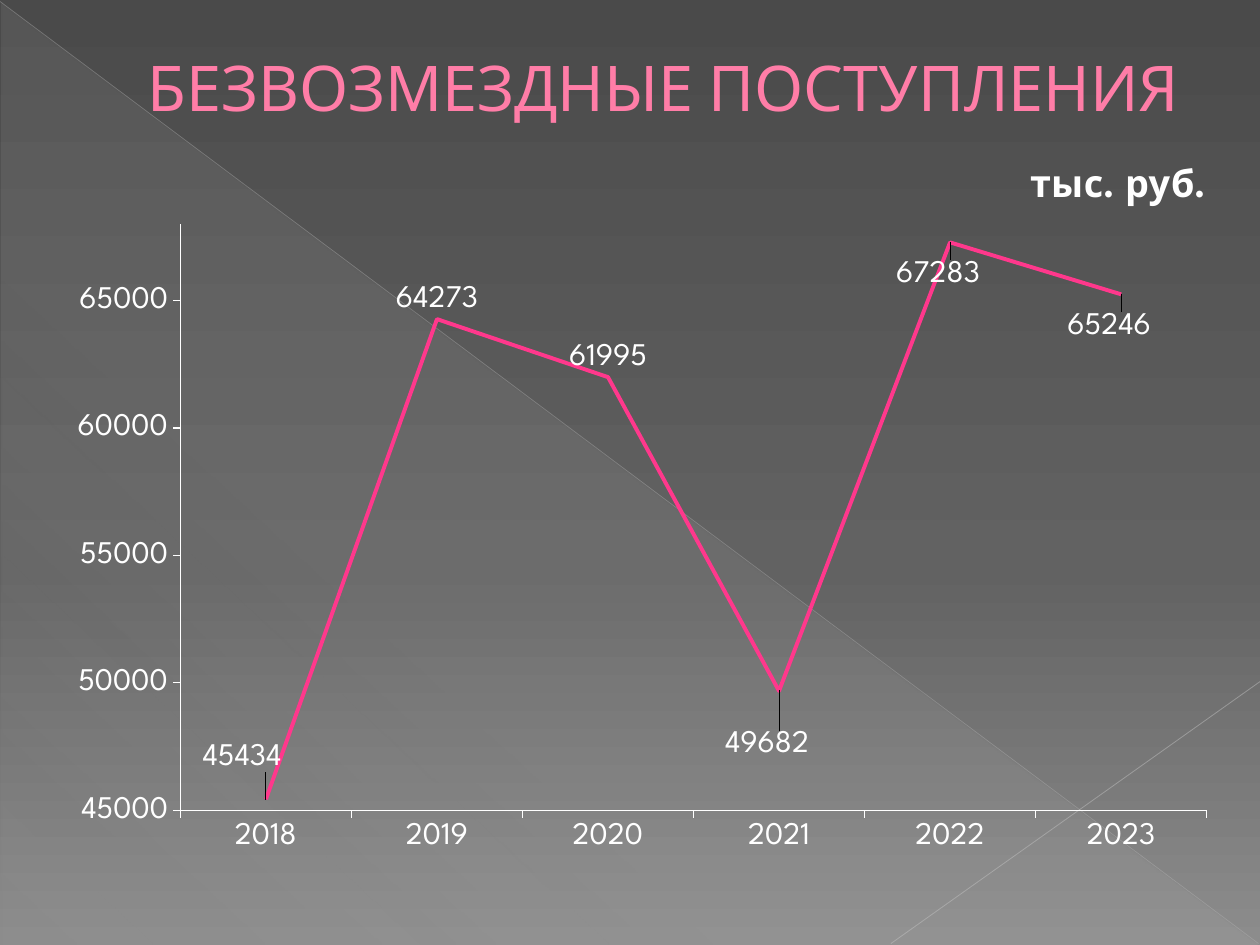
from lxml import etree
from pptx import Presentation
from pptx import util as u
from pptx.chart.data import CategoryChartData
from pptx.dml.color import RGBColor
from pptx.enum import chart as ch, shapes, text
from pptx.oxml.ns import qn

FONT = "League Spartan"


def rgb(value):
    return RGBColor.from_string(value)


def set_layout(parent, index, **settings):
    """Give a chart part a manual layout, replacing any it has."""
    for old in parent.findall(qn("c:layout")):
        parent.remove(old)
    layout = etree.Element(qn("c:layout"))
    manual = etree.SubElement(layout, qn("c:manualLayout"))
    for name, value in settings.items():
        etree.SubElement(manual, qn("c:" + name)).set("val", str(value))
    parent.insert(index, layout)


prs = Presentation()
prs.slide_width, prs.slide_height = u.Cm(25.4), u.Cm(19.05)
slide = prs.slides.add_slide(prs.slide_layouts[5])

# Background and corner triangle: (position, colour, opacity) in percent
slide.background.fill.gradient()
triangle = slide.shapes.add_shape(
    shapes.MSO_SHAPE.RIGHT_TRIANGLE, u.Cm(0.03), u.Cm(0.05), u.Cm(25.35), u.Cm(19))
triangle.shadow.inherit = False
triangle.line.fill.background()
triangle.fill.gradient()

gradients = [
    (slide._element.cSld.find(qn("p:bg")), 90,
     [(0, "4A4A4A", 100), (60, "626262", 100), (100, "8C8C8C", 100)]),
    (triangle._element.spPr, 133,
     [(0, "D2D2D2", 10), (70, "D2D2D2", 8), (100, "D2D2D2", 1)]),
]
for owner, angle, stops in gradients:
    gradient = next(owner.iter(qn("a:gradFill")))
    for child in list(gradient):
        gradient.remove(child)
    stop_list = etree.SubElement(gradient, qn("a:gsLst"))
    for position, colour, opacity in stops:
        stop = etree.SubElement(stop_list, qn("a:gs"), pos=str(position * 1000))
        tint = etree.SubElement(stop, qn("a:srgbClr"), val=colour)
        if opacity < 100:
            etree.SubElement(tint, qn("a:alpha"), val=str(opacity * 1000))
    etree.SubElement(gradient, qn("a:lin"), ang=str(angle * 60000), scaled="0")

# Crossing diagonals
diagonals = [
    ((0, 0.03, 25.37, 19.02), "BFBFBF", 0.39, 35),
    ((25.4, 13.74, 17.96, 19.02), "C6C6C6", 0.47, 45),
]
for ends, colour, width, opacity in diagonals:
    diagonal = slide.shapes.add_connector(
        shapes.MSO_CONNECTOR.STRAIGHT, *[u.Cm(end) for end in ends])
    diagonal.line.color.rgb = rgb(colour)
    diagonal.line.width = u.Pt(width)
    properties = diagonal._element.spPr
    etree.SubElement(next(properties.iter(qn("a:srgbClr"))), qn("a:alpha"),
                     val=str(opacity * 1000))
    etree.SubElement(properties, qn("a:effectLst"))

# Heading, brought in front of the decoration
heading = slide.shapes.title
slide.shapes._spTree.append(heading._element)
heading.left, heading.top = u.Cm(1.27), u.Cm(0.74)
heading.width, heading.height = u.Cm(22.86), u.Cm(1.98)
frame = heading.text_frame
frame.text = "БЕЗВОЗМЕЗДНЫЕ ПОСТУПЛЕНИЯ"
frame.vertical_anchor = text.MSO_ANCHOR.MIDDLE
paragraph = frame.paragraphs[0]
paragraph.alignment = text.PP_ALIGN.CENTER
indent = paragraph._p.get_or_add_pPr()
indent.set("marL", str(u.Cm(1.35)))
indent.set("indent", "0")
run = paragraph.runs[0]
run.font.size = u.Pt(36)
run.font.name = FONT
run.font.color.rgb = rgb("FF7DA7")
outline = etree.Element(qn("a:ln"), w=str(u.Pt(0.5)))
etree.SubElement(etree.SubElement(outline, qn("a:solidFill")),
                 qn("a:srgbClr"), val="B12761")
run._r.get_or_add_rPr().insert(0, outline)

# Receipts by year
receipts = CategoryChartData()
receipts.categories = ["2018", "2019", "2020", "2021", "2022", "2023"]
receipts.add_series("Series 1", [45434, 64273, 61995, 49682, 67283, 65246])
chart = slide.shapes.add_chart(
    ch.XL_CHART_TYPE.LINE, u.Cm(0.71), u.Cm(2.92), u.Cm(24), u.Cm(14.81), receipts).chart
chart.has_legend = False
chart.font.size = u.Pt(18)
chart.font.name = FONT
chart.font.color.rgb = rgb("FFFFFF")

units = chart.chart_title
units.text_frame.text = "тыс. руб."
units_font = units.text_frame.paragraphs[0].runs[0].font
units_font.size = u.Pt(21.6)
units_font.bold = True
units_font.name = FONT
units_font.color.rgb = rgb("FFFFFF")
units.include_in_layout = False
set_layout(units._element, 1, xMode="edge", yMode="edge", x=0.83, y=0.02)
set_layout(chart._chartSpace.chart.plotArea, 0, layoutTarget="inner",
           xMode="edge", yMode="edge", x=0.122, y=0.108, w=0.862, h=0.798)

for axis in (chart.category_axis, chart.value_axis):
    axis.has_major_gridlines = False
    axis.major_tick_mark = ch.XL_TICK_MARK.OUTSIDE
    axis.format.line.color.rgb = rgb("FFFFFF")
    axis.format.line.width = u.Pt(0.75)
amounts = chart.value_axis
amounts.minimum_scale, amounts.maximum_scale = 45000, 68000
amounts.major_unit = 5000

series = chart.plots[0].series[0]
series.smooth = False
series.marker.style = ch.XL_MARKER_STYLE.NONE
series.format.line.color.rgb = rgb("FF388C")
series.format.line.width = u.Pt(2.25)
labels = series.data_labels
labels.show_value = True
labels.position = ch.XL_LABEL_POSITION.ABOVE

# Labels moved off the line, as shares of the chart's size
label_shifts = {0: (-0.02, -0.03), 3: (-0.01, 0.1), 4: (-0.01, 0.07), 5: (-0.01, 0.07)}
for number, (right, down) in label_shifts.items():
    series.points[number].data_label.position = ch.XL_LABEL_POSITION.ABOVE
    label = next(item for item in series._element.iter(qn("c:dLbl"))
                 if item.find(qn("c:idx")).get("val") == str(number))
    set_layout(label, 1, x=right, y=down)

prs.save("out.pptx")
